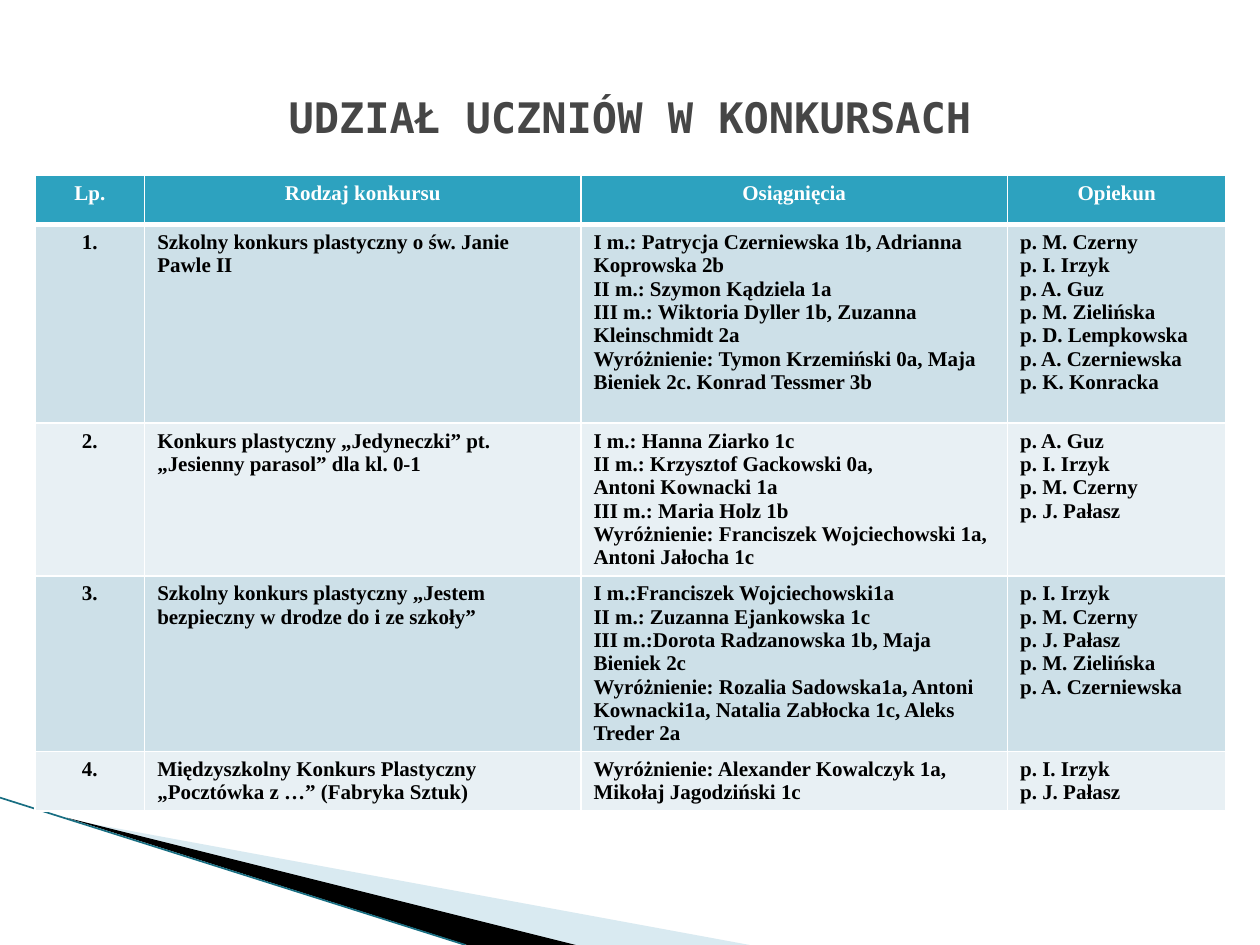
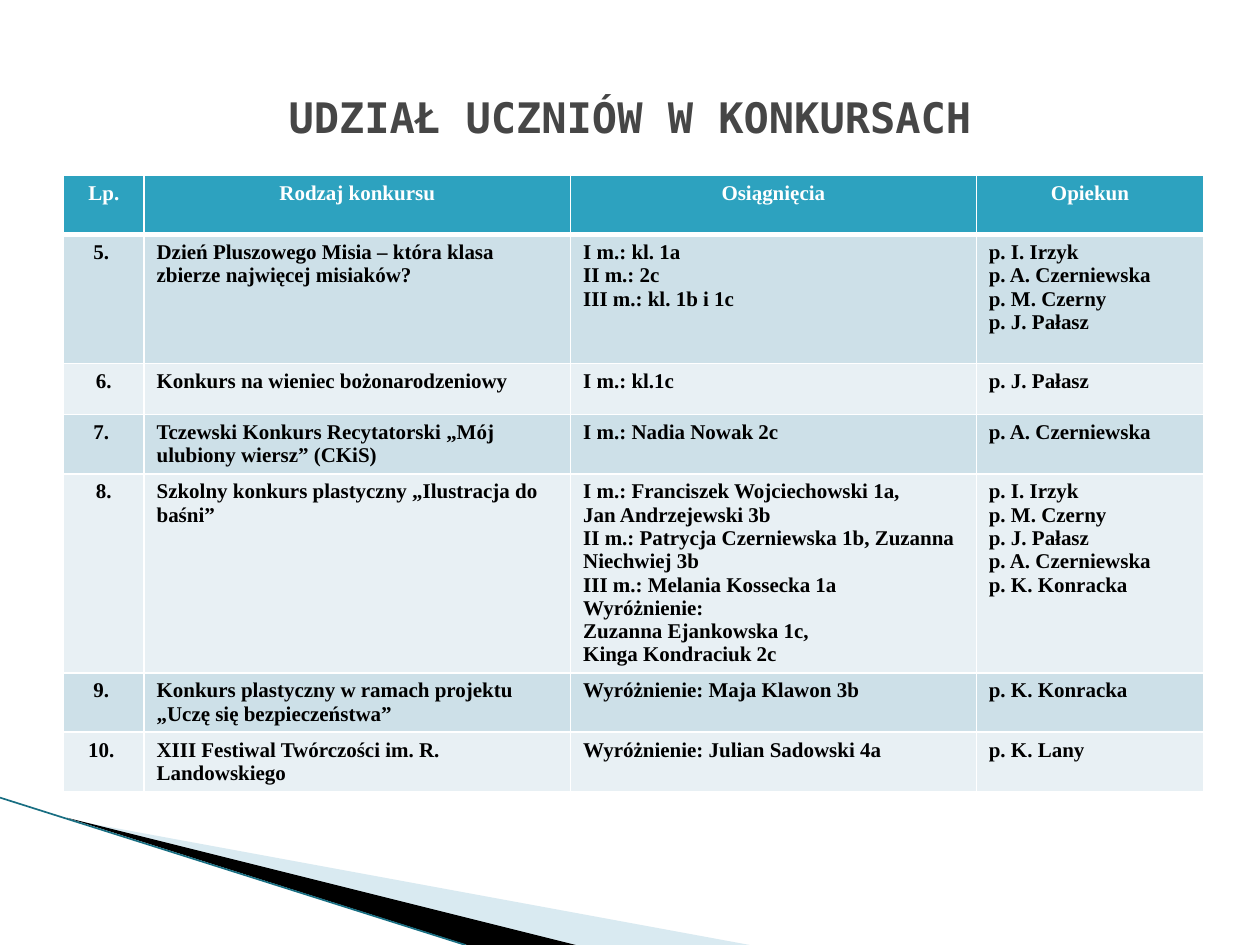
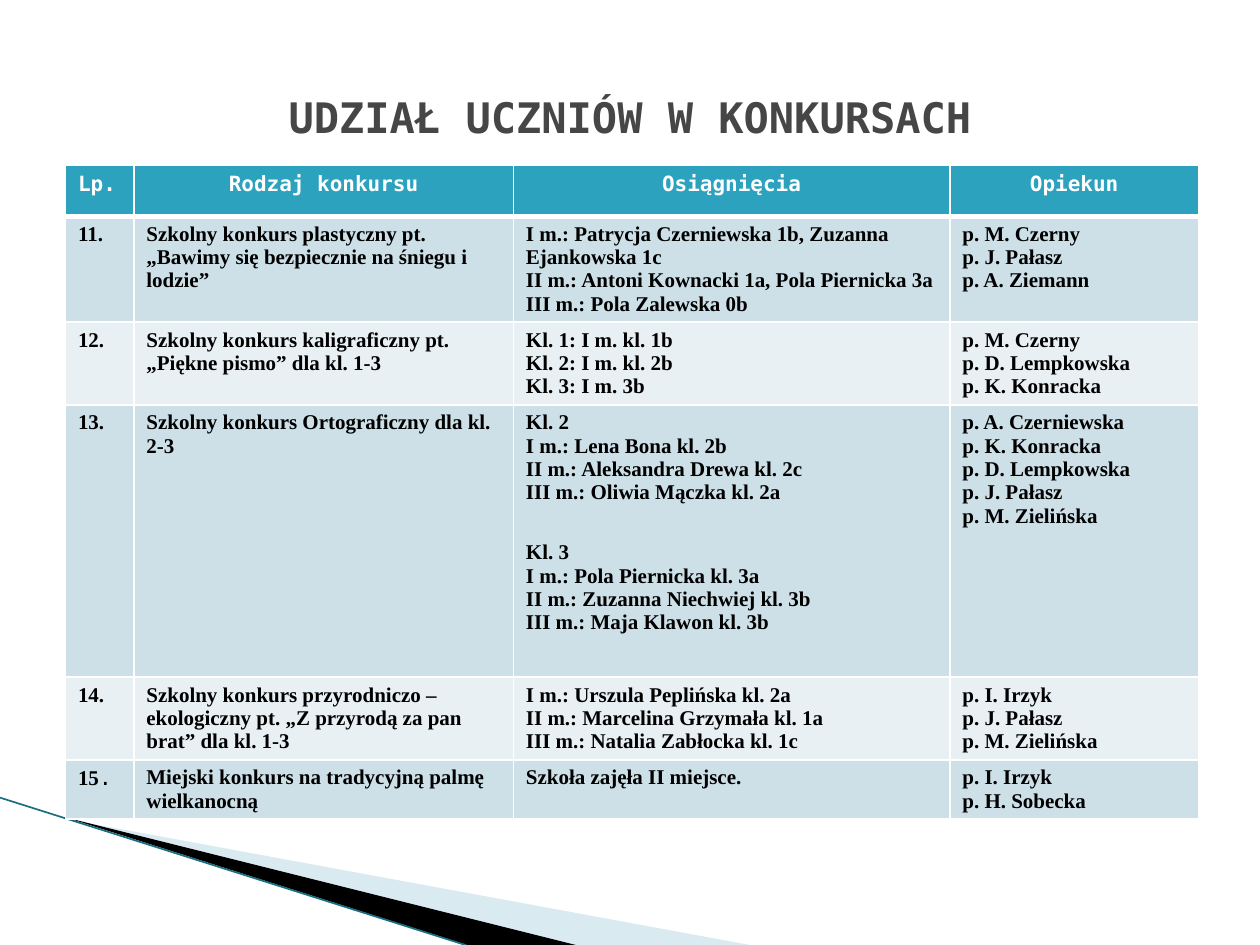
import dataclasses

import lxml.etree
import pptx
import pptx.dml.color
import pptx.enum.shapes
import pptx.enum.text
import pptx.oxml.ns
import pptx.shapes.base
import pptx.slide
import pptx.table
import pptx.text.text
import pptx.util

Pt = pptx.util.Pt
RGBColor = pptx.dml.color.RGBColor
Align = pptx.enum.text.PP_ALIGN
qn = pptx.oxml.ns.qn

WHITE = RGBColor(0xFF, 0xFF, 0xFF)
BLACK = RGBColor(0x00, 0x00, 0x00)
TITLE_GREY = RGBColor(0x46, 0x46, 0x46)
HEADER_TEAL = RGBColor(0x2D, 0xA2, 0xBF)
BAND_DARK = RGBColor(0xCD, 0xE0, 0xE8)
BAND_LIGHT = RGBColor(0xE8, 0xF0, 0xF4)
WEDGE_BLUE = RGBColor(0xA0, 0xCB, 0xDC)
EDGE_TEAL = RGBColor(0x18, 0x6E, 0x82)

SERIF = "Times New Roman"
MONO = "DejaVu Sans Mono"
TITLE = "UDZIAŁ UCZNIÓW W KONKURSACH"
HEADERS = ("Lp.", "Rodzaj konkursu", "Osiągnięcia", "Opiekun")
GROUP_GAP = 21


@dataclasses.dataclass(frozen=True)
class Wedge:
    points: tuple[tuple[float, float], ...]
    color: RGBColor
    opacity: int = 100


@dataclasses.dataclass(frozen=True)
class Contest:
    number: str
    name: str
    results: str
    teachers: str
    height: float


@dataclasses.dataclass(frozen=True)
class ContestTable:
    left: float
    top: float
    widths: tuple[float, ...]
    header_height: float
    contests: tuple[Contest, ...]
    header_font: str = SERIF
    number_align: Align = Align.CENTER


WEDGES = (
    Wedge(((39.6, 468.4), (428.4, 540), (328.3, 540)), WEDGE_BLUE, 40),
    Wedge(((38.2, 467.3), (329, 540), (267, 540)), BLACK),
)

TABLES = (
    ContestTable(20, 100.3, (62.7, 249.3, 243.8, 124.8), 28, (
        Contest(
            "1.",
            "Szkolny konkurs plastyczny o św. Janie Pawle II",
            "I m.: Patrycja Czerniewska 1b, Adrianna Koprowska 2b\n"
            "II m.: Szymon Kądziela 1a\n"
            "III m.: Wiktoria Dyller 1b, Zuzanna Kleinschmidt 2a\n"
            "Wyróżnienie: Tymon Krzemiński 0a, Maja Bieniek 2c. Konrad Tessmer 3b",
            "p. M. Czerny\np. I. Irzyk\np. A. Guz\np. M. Zielińska\n"
            "p. D. Lempkowska\np. A. Czerniewska\np. K. Konracka",
            113.6),
        Contest(
            "2.",
            "Konkurs plastyczny „Jedyneczki” pt. „Jesienny parasol” dla kl. 0-1",
            "I m.: Hanna Ziarko 1c\n"
            "II m.: Krzysztof Gackowski 0a,\n"
            "Antoni Kownacki 1a\n"
            "III m.: Maria Holz 1b\n"
            "Wyróżnienie: Franciszek Wojciechowski 1a, Antoni Jałocha 1c",
            "p. A. Guz\np. I. Irzyk\np. M. Czerny\np. J. Pałasz",
            87.1),
        Contest(
            "3.",
            "Szkolny konkurs plastyczny „Jestem bezpieczny w drodze do i ze szkoły”",
            "I m.:Franciszek Wojciechowski1a\n"
            "II m.: Zuzanna Ejankowska 1c\n"
            "III m.:Dorota Radzanowska 1b, Maja Bieniek 2c\n"
            "Wyróżnienie: Rozalia Sadowska1a, Antoni Kownacki1a, "
            "Natalia Zabłocka 1c, Aleks Treder 2a",
            "p. I. Irzyk\np. M. Czerny\np. J. Pałasz\np. M. Zielińska\n"
            "p. A. Czerniewska",
            100.5),
        Contest(
            "4.",
            "Międzyszkolny Konkurs Plastyczny „Pocztówka z …” (Fabryka Sztuk)",
            "Wyróżnienie: Alexander Kowalczyk 1a, Mikołaj Jagodziński 1c",
            "p. I. Irzyk\np. J. Pałasz",
            33.8),
    )),
    ContestTable(36.4, 100.3, (45.9, 243.8, 231.8, 130.1), 33.8, (
        Contest(
            "5. ",
            "Dzień Pluszowego Misia – która klasa zbierze najwięcej misiaków?",
            "I m.: kl. 1a\nII m.: 2c\nIII m.: kl. 1b i 1c",
            "p. I. Irzyk\np. A. Czerniewska\np. M. Czerny\np. J. Pałasz",
            73.6),
        Contest(
            "6.",
            "Konkurs na wieniec bożonarodzeniowy",
            "I m.: kl.1c",
            "p. J. Pałasz",
            29.2),
        Contest(
            "7. ",
            "Tczewski Konkurs Recytatorski „Mój ulubiony wiersz” (CKiS)",
            "I m.: Nadia Nowak 2c",
            "p. A. Czerniewska",
            33.8),
        Contest(
            "8.",
            "Szkolny konkurs plastyczny „Ilustracja do baśni”",
            "I m.: Franciszek Wojciechowski 1a,\n"
            "Jan Andrzejewski 3b\n"
            "II m.: Patrycja Czerniewska 1b, Zuzanna Niechwiej 3b\n"
            "III m.: Melania Kossecka 1a\n"
            "Wyróżnienie:\n"
            "Zuzanna Ejankowska 1c,\n"
            "Kinga Kondraciuk 2c",
            "p. I. Irzyk\np. M. Czerny\np. J. Pałasz\np. A. Czerniewska\n"
            "p. K. Konracka",
            113.8),
        Contest(
            "9. ",
            "Konkurs plastyczny w ramach projektu „Uczę się bezpieczeństwa”",
            "Wyróżnienie: Maja Klawon 3b",
            "p. K. Konracka",
            33.8),
        Contest(
            "10. ",
            "XIII Festiwal Twórczości im. R. Landowskiego",
            "Wyróżnienie: Julian Sadowski 4a",
            "p. K. Lany",
            33.8),
    )),
    ContestTable(37.4, 94.6, (39.1, 216.9, 249.4, 142.2), 29, (
        Contest(
            "11.",
            "Szkolny konkurs plastyczny pt. „Bawimy się bezpiecznie na śniegu i lodzie”",
            "I m.: Patrycja Czerniewska 1b, Zuzanna Ejankowska 1c\n"
            "II m.: Antoni Kownacki 1a, Pola Piernicka 3a\n"
            "III m.: Pola Zalewska 0b",
            "p. M. Czerny\np. J. Pałasz\np. A. Ziemann",
            60.4),
        Contest(
            "12.",
            "Szkolny konkurs kaligraficzny pt. „Piękne pismo” dla kl. 1-3",
            "Kl. 1: I m. kl. 1b\nKl. 2: I m. kl. 2b\nKl. 3: I m. 3b",
            "p. M. Czerny\np. D. Lempkowska\np. K. Konracka",
            47.2),
        Contest(
            "13.",
            "Szkolny konkurs Ortograficzny dla kl. 2-3",
            "Kl. 2\n"
            "I m.: Lena Bona kl. 2b\n"
            "II m.: Aleksandra Drewa kl. 2c\n"
            "III m.: Oliwia Mączka kl. 2a\n\n"
            "Kl. 3\n"
            "I m.: Pola Piernicka kl. 3a\n"
            "II m.: Zuzanna Niechwiej kl. 3b\n"
            "III m.: Maja Klawon kl. 3b",
            "p. A. Czerniewska\np. K. Konracka\np. D. Lempkowska\n"
            "p. J. Pałasz\np. M. Zielińska",
            155.7),
        Contest(
            "14.",
            "Szkolny konkurs przyrodniczo – ekologiczny pt. "
            "„Z przyrodą za pan brat” dla kl. 1-3",
            "I m.: Urszula Peplińska kl. 2a\n"
            "II m.: Marcelina Grzymała kl. 1a\n"
            "III m.: Natalia Zabłocka kl. 1c",
            "p. I. Irzyk\np. J. Pałasz\np. M. Zielińska",
            47.2),
        Contest(
            "15",
            "Miejski konkurs na tradycyjną palmę wielkanocną",
            "Szkoła zajęła II miejsce.",
            "p. I. Irzyk\np. H. Sobecka",
            33.8),
    ), MONO, Align.LEFT),
)


def add_run(paragraph: pptx.text.text._Paragraph, text: str, *, font: str = SERIF,
            size: float = 12, color: RGBColor = BLACK, bold: bool = True) -> None:
    run = paragraph.add_run()
    run.text = text
    run.font.name = font
    run.font.size = Pt(size)
    run.font.bold = bold
    run.font.color.rgb = color


def write_text(frame: pptx.text.text.TextFrame, text: str, *,
               align: Align = Align.LEFT, **style) -> None:
    paragraph = frame.paragraphs[0]
    for group_index, group in enumerate(text.split("\n\n")):
        for line_index, line in enumerate(group.split("\n")):
            if group_index or line_index:
                paragraph = frame.add_paragraph()
            if group_index and not line_index:
                paragraph.space_before = Pt(GROUP_GAP)
            paragraph.alignment = align
            add_run(paragraph, line, **style)


def set_borders(cell: pptx.table._Cell, top: float, bottom: float) -> None:
    properties = cell._tc.get_or_add_tcPr()
    for side, width in (("L", 1), ("R", 1), ("T", top), ("B", bottom)):
        line = lxml.etree.SubElement(properties, qn(f"a:ln{side}"), w=str(Pt(width)))
        fill = lxml.etree.SubElement(line, qn("a:solidFill"))
        lxml.etree.SubElement(fill, qn("a:srgbClr"), val=str(WHITE))


def draw_wedge(slide: pptx.slide.Slide, wedge: Wedge) -> None:
    points = [(Pt(x), Pt(y)) for x, y in wedge.points]
    builder = slide.shapes.build_freeform(*points[0])
    builder.add_line_segments(points[1:])
    shape = builder.convert_to_shape()
    shape.shadow.inherit = False
    shape.line.fill.background()
    shape.fill.solid()
    shape.fill.fore_color.rgb = wedge.color
    if wedge.opacity < 100:
        color = shape._element.spPr.find(qn("a:solidFill")).find(qn("a:srgbClr"))
        lxml.etree.SubElement(color, qn("a:alpha"), val=str(wedge.opacity * 1000))


def draw_corner(slide: pptx.slide.Slide) -> None:
    for wedge in WEDGES:
        draw_wedge(slide, wedge)
    edge = slide.shapes.add_connector(
        pptx.enum.shapes.MSO_CONNECTOR.STRAIGHT, Pt(0), Pt(455.8), Pt(266), Pt(540))
    edge.line.color.rgb = EDGE_TEAL
    edge.line.width = Pt(0.95)
    lxml.etree.SubElement(edge._element.spPr, qn("a:effectLst"))


def draw_title(slide: pptx.slide.Slide) -> None:
    box = slide.shapes.add_textbox(Pt(36), Pt(21.6), Pt(648), Pt(90))
    frame = box.text_frame
    frame.word_wrap = True
    frame.vertical_anchor = pptx.enum.text.MSO_ANCHOR.MIDDLE
    write_text(frame, TITLE, align=Align.CENTER, font=MONO, size=24, color=TITLE_GREY)


def draw_table(slide: pptx.slide.Slide, spec: ContestTable) -> pptx.table.Table:
    heights = [spec.header_height] + [contest.height for contest in spec.contests]
    table = slide.shapes.add_table(
        len(heights), len(HEADERS), Pt(spec.left), Pt(spec.top),
        Pt(sum(spec.widths)), Pt(sum(heights))).table
    table.horz_banding = False
    for column, width in zip(table.columns, spec.widths):
        column.width = Pt(width)
    rows = [HEADERS] + [
        (contest.number, contest.name, contest.results, contest.teachers)
        for contest in spec.contests]
    for row_index, (texts, height) in enumerate(zip(rows, heights)):
        table.rows[row_index].height = Pt(height)
        is_header = row_index == 0
        band = BAND_DARK if row_index % 2 else BAND_LIGHT
        for column_index, text in enumerate(texts):
            cell = table.cell(row_index, column_index)
            set_borders(cell, 3 if row_index == 1 else 1, 3 if is_header else 1)
            cell.fill.solid()
            cell.fill.fore_color.rgb = HEADER_TEAL if is_header else band
            if column_index == 0:
                align = spec.number_align
            else:
                align = Align.CENTER if is_header else Align.LEFT
            write_text(cell.text_frame, text, align=align,
                       font=spec.header_font if is_header else SERIF,
                       color=WHITE if is_header else BLACK)
    return table


def main() -> None:
    presentation = pptx.Presentation()
    presentation.slide_width = Pt(720)
    presentation.slide_height = Pt(540)
    for spec in TABLES:
        slide = presentation.slides.add_slide(presentation.slide_layouts[6])
        draw_corner(slide)
        table = draw_table(slide, spec)
        draw_title(slide)
    last_number = table.cell(len(spec.contests), 0).text_frame.paragraphs[0]
    add_run(last_number, ".", font=MONO, bold=False)
    presentation.save("out.pptx")


if __name__ == "__main__":
    main()
